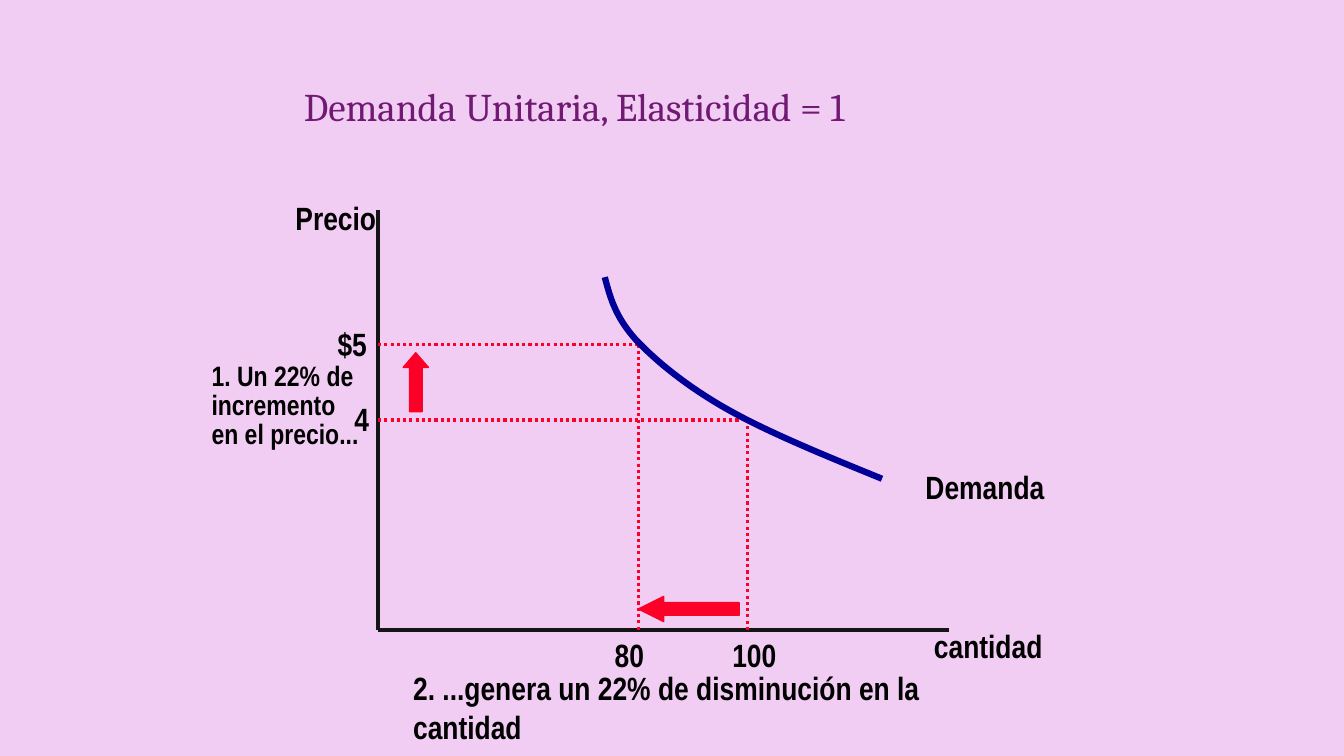
from dataclasses import dataclass

from lxml import etree
from pptx import Presentation
from pptx import util as u
from pptx.dml.color import RGBColor
from pptx.enum import dml, shapes, text
from pptx.oxml.ns import qn

SCALE = 9525


@dataclass(frozen=True)
class Theme:
    background: str = "F2CDF3"
    title: str = "711A73"
    ink: str = "000000"
    axis: str = "151517"
    accent: str = "FC0128"
    curve: str = "000099"
    title_font: str = "Cambria"
    label_font: str = "Arial Narrow"
    title_size: int = 28
    label_size: int = 23
    note_size: int = 20
    outline: int = 1
    line: float = 2.25
    curve_line: float = 4.5


def px(value):
    return u.Emu(round(value * SCALE))


def bezier_points(start, segments, steps=16):
    points = [start]
    for first, second, end in segments:
        for step in range(1, steps + 1):
            t = step / steps
            s = 1 - t
            points.append(tuple(
                s ** 3 * a + 3 * s * s * t * b + 3 * s * t * t * c + t ** 3 * d
                for a, b, c, d in zip(start, first, second, end)))
        start = end
    return points


class DemandSlide:
    def __init__(self, presentation, theme):
        self.theme = theme
        self.slide = presentation.slides.add_slide(presentation.slide_layouts[6])
        fill = self.slide.background.fill
        fill.solid()
        fill.fore_color.rgb = RGBColor.from_string(theme.background)

    def apply(self, target, values):
        for name, value in values.items():
            setattr(target, name, value)

    def stroke(self, line, color, width):
        line.color.rgb = RGBColor.from_string(color)
        line.width = u.Pt(width)

    def label(self, lines, box, size=None, font=None, color=None, bold=True,
              wrap=False, spacing=1.0, anchor=text.MSO_ANCHOR.TOP):
        frame = self.slide.shapes.add_textbox(*map(px, box)).text_frame
        self.apply(frame, {"word_wrap": wrap, "vertical_anchor": anchor})
        frame.text = "\n".join(lines)
        for paragraph in frame.paragraphs:
            paragraph.line_spacing = spacing
            self.apply(paragraph.font, {
                "name": font or self.theme.label_font,
                "size": u.Pt(size or self.theme.label_size),
                "bold": bold,
            })
            paragraph.font.color.rgb = RGBColor.from_string(color or self.theme.ink)

    def segment(self, start, end, color, dash=None):
        connector = self.slide.shapes.add_connector(
            shapes.MSO_CONNECTOR.STRAIGHT, *map(px, (*start, *end)))
        self.stroke(connector.line, color, self.theme.line)
        if dash:
            connector.line.dash_style = dash
        etree.SubElement(connector._element.spPr, qn("a:effectLst"))

    def guide(self, start, end):
        self.segment(start, end, self.theme.accent, dml.MSO_LINE.ROUND_DOT)

    def arrow(self, kind, box, head):
        shape = self.slide.shapes.add_shape(kind, *map(px, box))
        shape.shadow.inherit = False
        shape.adjustments[0] = 0.5
        shape.adjustments[1] = head
        shape.fill.solid()
        shape.fill.fore_color.rgb = RGBColor.from_string(self.theme.accent)
        self.stroke(shape.line, self.theme.accent, self.theme.outline)

    def curve(self, start, segments):
        points = [(px(x), px(y)) for x, y in bezier_points(start, segments)]
        builder = self.slide.shapes.build_freeform(*points[0])
        builder.add_line_segments(points[1:], close=False)
        shape = builder.convert_to_shape()
        shape.shadow.inherit = False
        shape.fill.background()
        self.stroke(shape.line, self.theme.curve, self.theme.curve_line)


def main():
    presentation = Presentation()
    presentation.slide_width = px(1280)
    presentation.slide_height = px(720)
    theme = Theme()
    slide = DemandSlide(presentation, theme)

    slide.label(["Demanda Unitaria, Elasticidad = 1"], (280, 48, 792, 112),
                size=theme.title_size, font=theme.title_font, color=theme.title,
                bold=False, wrap=True, spacing=0.9, anchor=text.MSO_ANCHOR.MIDDLE)

    axis_x, axis_y = 360, 600
    slide.segment((axis_x, 200), (axis_x, axis_y), theme.axis)
    slide.segment((axis_x, axis_y), (904, axis_y), theme.axis)

    for x, y, end in ((608, 328, 608), (712, 400, 704)):
        slide.guide((axis_x, y), (end, y))
        slide.guide((x, y), (x, axis_y))

    slide.curve((576, 264), [
        ((581, 283), (586, 302), (606, 324)),
        ((625, 344), (654, 368), (693, 390)),
        ((732, 412), (786, 434), (840, 456)),
    ])

    for word, left, top, width in (
        ("cantidad", 880, 592, 128),
        ("Precio", 272, 184, 100),
        ("4", 328, 376, 38),
        ("$5", 312, 304, 51),
        ("Demanda", 872, 440, 140),
        ("100", 688, 600, 65),
        ("80", 576, 600, 51),
    ):
        slide.label([word], (left, top, width, 46))

    slide.label(["1. Un 22% de", "incremento", "en el precio..."],
                (192, 342, 164, 92), size=theme.note_size, spacing=0.85)
    slide.label(["2. ...genera un 22% de disminución en la cantidad"],
                (384, 632, 590, 84), wrap=True)

    slide.arrow(shapes.MSO_SHAPE.UP_ARROW, (384, 336, 24, 56), 0.58)
    slide.arrow(shapes.MSO_SHAPE.LEFT_ARROW, (608, 568, 96, 24), 1)

    presentation.save("out.pptx")


if __name__ == "__main__":
    main()
